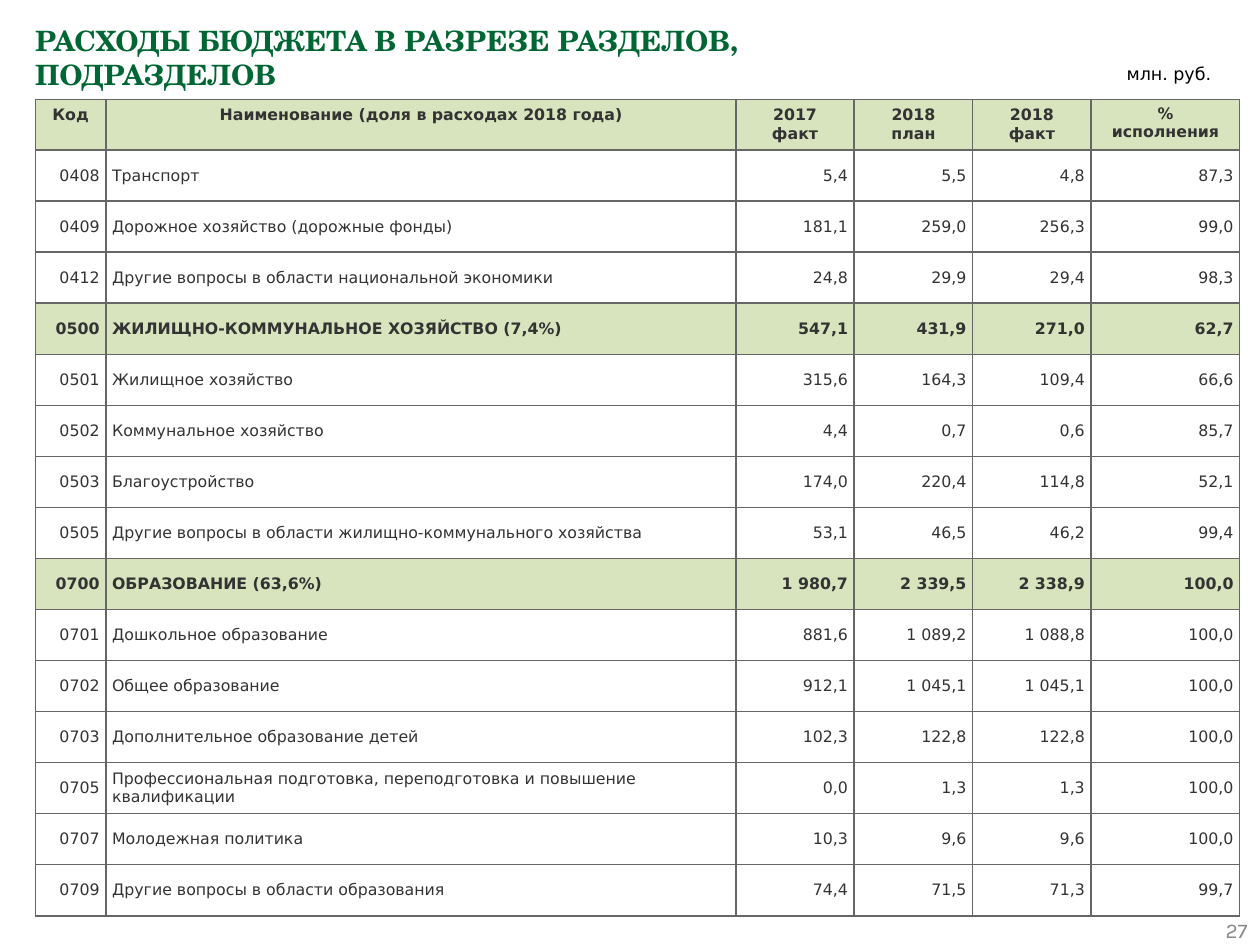
from lxml import etree
from pptx import Presentation
from pptx.dml.color import RGBColor
from pptx.enum.shapes import MSO_SHAPE
from pptx.enum.text import MSO_ANCHOR, PP_ALIGN
from pptx.oxml.ns import qn
from pptx.util import Inches, Pt

LEFT, CENTER, RIGHT = PP_ALIGN.LEFT, PP_ALIGN.CENTER, PP_ALIGN.RIGHT
TOP, MIDDLE = MSO_ANCHOR.TOP, MSO_ANCHOR.MIDDLE
HOME_PLATE = MSO_SHAPE.PENTAGON

COLORS = {
    "title": "006633",
    "text": "333333",
    "unit": "000000",
    "page": "898989",
    "border": "666666",
    "band": "D7E4BD",
}
BODY_FONT = "DejaVu Sans"

HEADERS = [
    "Код",
    "Наименование (доля в расходах 2018 года)",
    "2017\nфакт",
    "2018\nплан",
    "2018\nфакт",
    "%\nисполнения",
]
ROWS = [
    ("0408", "Транспорт", "5,4", "5,5", "4,8", "87,3"),
    ("0409", "Дорожное хозяйство (дорожные фонды)", "181,1", "259,0", "256,3", "99,0"),
    ("0412", "Другие вопросы в области национальной экономики", "24,8", "29,9", "29,4", "98,3"),
    ("0500", "ЖИЛИЩНО-КОММУНАЛЬНОЕ ХОЗЯЙСТВО (7,4%)", "547,1", "431,9", "271,0", "62,7"),
    ("0501", "Жилищное хозяйство", "315,6", "164,3", "109,4", "66,6"),
    ("0502", "Коммунальное хозяйство", "4,4", "0,7", "0,6", "85,7"),
    ("0503", "Благоустройство", "174,0", "220,4", "114,8", "52,1"),
    ("0505", "Другие вопросы в области жилищно-коммунального хозяйства", "53,1", "46,5", "46,2", "99,4"),
    ("0700", "ОБРАЗОВАНИЕ (63,6%)", "1 980,7", "2 339,5", "2 338,9", "100,0"),
    ("0701", "Дошкольное образование", "881,6", "1 089,2", "1 088,8", "100,0"),
    ("0702", "Общее образование", "912,1", "1 045,1", "1 045,1", "100,0"),
    ("0703", "Дополнительное образование детей", "102,3", "122,8", "122,8", "100,0"),
    ("0705", "Профессиональная подготовка, переподготовка и повышение квалификации",
     "0,0", "1,3", "1,3", "100,0"),
    ("0707", "Молодежная политика", "10,3", "9,6", "9,6", "100,0"),
    ("0709", "Другие вопросы в области образования", "74,4", "71,5", "71,3", "99,7"),
]
COL_WIDTHS = [0.56, 5, 0.94, 0.94, 0.94, 1.18]
TABLE_HEIGHT, HEADER_HEIGHT = 6.48, 0.4


def write(tf, text, size, font, color, bold=False, align=LEFT):
    tf.text = text
    for p in tf.paragraphs:
        p.alignment = align
        for r in p.runs:
            r.font.size = Pt(size)
            r.font.name = font
            r.font.bold = bold
            r.font.color.rgb = RGBColor.from_string(COLORS[color])


def add_borders(cell):
    tcPr = cell._tc.get_or_add_tcPr()
    for i, side in enumerate(("lnL", "lnR", "lnT", "lnB")):
        ln = etree.Element(qn(f"a:{side}"), w=str(Pt(1)))
        fill = etree.SubElement(ln, qn("a:solidFill"))
        etree.SubElement(fill, qn("a:srgbClr"), val=COLORS["border"])
        tcPr.insert(i, ln)


prs = Presentation()
prs.slide_width, prs.slide_height = Inches(10), Inches(7.5)
s = prs.slides.add_slide(prs.slide_layouts[6])

# Title
title = s.shapes.add_textbox(Inches(0.18), Inches(0.14), Inches(6.02), Inches(1.15))
title.text_frame.word_wrap = True
write(title.text_frame, "РАСХОДЫ БЮДЖЕТА В РАЗРЕЗЕ РАЗДЕЛОВ, ПОДРАЗДЕЛОВ",
      16, "TeX Gyre Schola", "title", bold=True)

# Budget table
table = s.shapes.add_table(len(ROWS) + 1, len(HEADERS), Inches(0.28), Inches(0.79),
                           Inches(sum(COL_WIDTHS)), Inches(TABLE_HEIGHT)).table
table.first_row = table.horz_banding = False
for col, width in zip(table.columns, COL_WIDTHS):
    col.width = Inches(width)
for row in table.rows:
    row.height = Inches((TABLE_HEIGHT - HEADER_HEIGHT) / len(ROWS))
table.rows[0].height = Inches(HEADER_HEIGHT)

for i, values in enumerate([HEADERS, *ROWS]):
    is_header = i == 0
    is_band = is_header or values[0].endswith("00")  # section totals
    for j, value in enumerate(values):
        cell = table.cell(i, j)
        align = CENTER if is_header else LEFT if j == 1 else RIGHT
        write(cell.text_frame, value, 9, BODY_FONT, "text", is_band, align)
        cell.vertical_anchor = TOP if is_header else MIDDLE
        narrow = is_header and j == len(HEADERS) - 1
        cell.margin_left = cell.margin_right = Inches(0.02 if narrow else 0.05)
        cell.margin_top = cell.margin_bottom = Inches(0.04 if narrow else 0.05)
        if is_band:
            cell.fill.solid()
            cell.fill.fore_color.rgb = RGBColor.from_string(COLORS["band"])
        else:
            cell.fill.background()
        add_borders(cell)

# Unit label
unit = s.shapes.add_shape(HOME_PLATE, Inches(8.47), Inches(0.48), Inches(1.24), Inches(0.21))
unit.adjustments[0] = 0
unit.shadow.inherit = False
unit.fill.background()
unit.line.fill.background()
unit.text_frame.vertical_anchor = MIDDLE
write(unit.text_frame, "млн. руб.", 10, BODY_FONT, "unit", align=RIGHT)

# Page number
page = s.shapes.add_textbox(Inches(7.67), Inches(7.18), Inches(2.33), Inches(0.4))
page.text_frame.word_wrap = True
page.text_frame.vertical_anchor = MIDDLE
write(page.text_frame, "27", 12, "Karla", "page", align=RIGHT)

prs.save("out.pptx")
